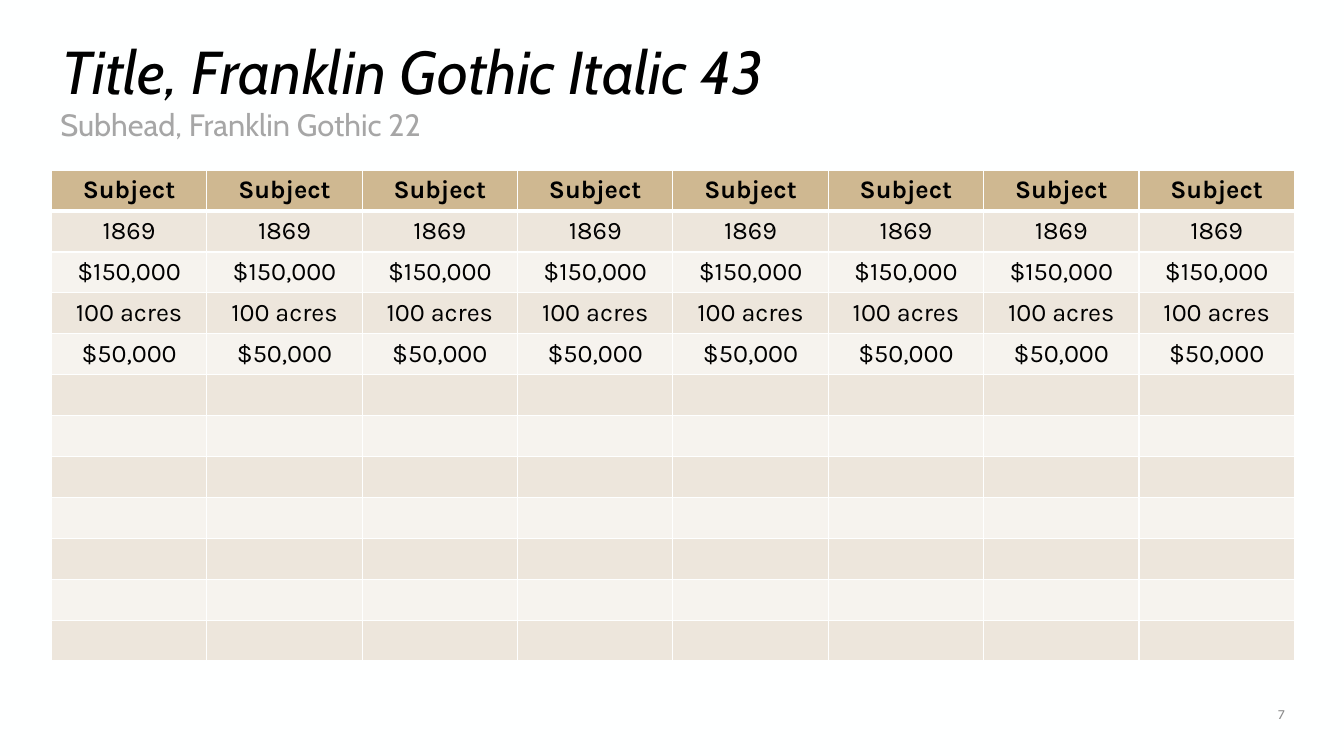
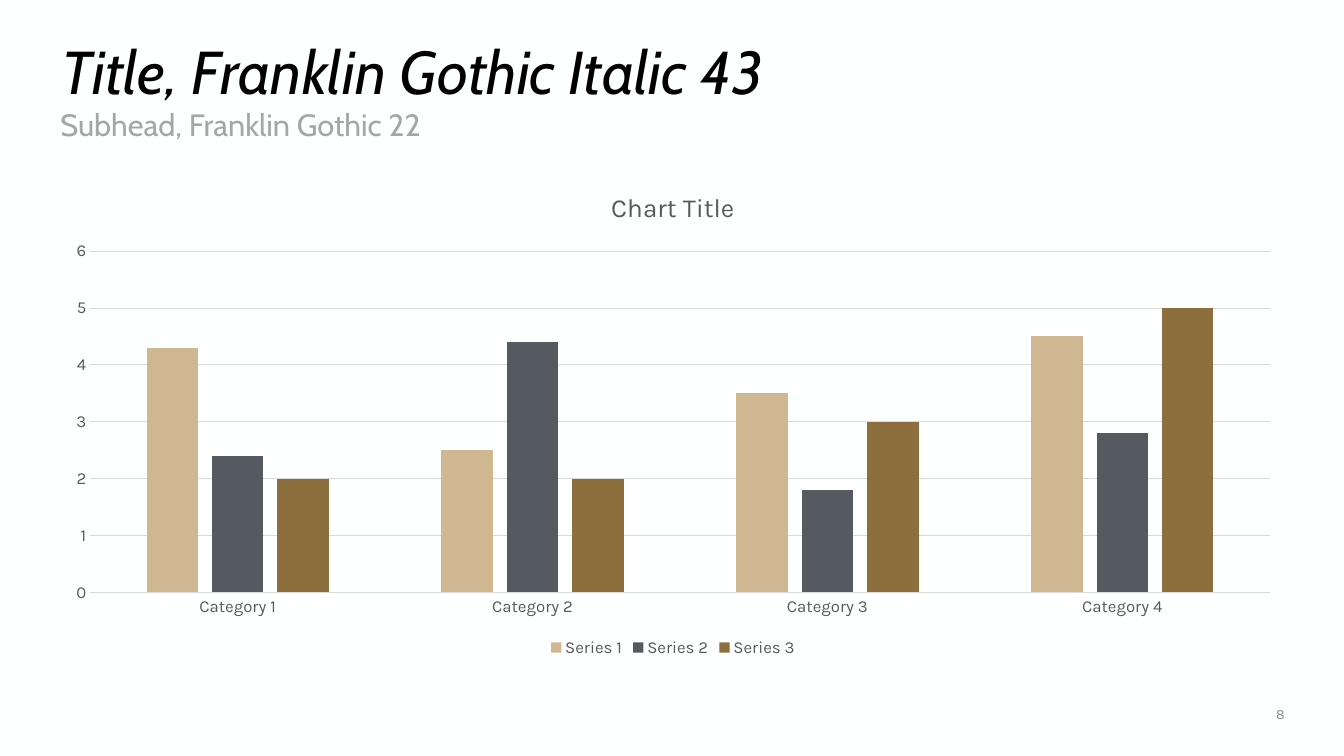
from lxml.etree import SubElement
from pptx import Presentation
from pptx.chart.data import CategoryChartData
from pptx.dml.color import RGBColor
from pptx.enum.chart import XL_CHART_TYPE as ChartType
from pptx.enum.chart import XL_LEGEND_POSITION as LegendPosition
from pptx.enum.chart import XL_TICK_MARK as TickMark
from pptx.enum.text import MSO_ANCHOR as Anchor
from pptx.enum.text import PP_ALIGN as Align
from pptx.oxml.ns import qn
from pptx.util import Pt

# Shared measures, fonts and colours
PX = 9525
PAGE_WIDTH, PAGE_HEIGHT = 1280, 720
CONTENT = (49, 162, 1184, 468)
HEAD_FONT, BODY_FONT = "Cabin", "Karla"
PAPER, INK, SUBHEAD_GRAY, NUMBER_GRAY = "FEFFFF", "000000", "A6A6A6", "8C8C8C"
GOLD, SLATE, BRONZE = "CFB891", "555960", "8D6F3D"
BANDS = ("EDE6DC", "F6F3EE")
CHART_GRAY, GRID_GRAY = "595959", "D9D9D9"

# Table content: one label per filled row
ROW_LABELS = ["Subject", "1869", "$150,000", "100 acres", "$50,000"]
ROWS, COLUMNS = 12, 8

# Chart content
CATEGORIES = [f"Category {number}" for number in range(1, 5)]
SERIES = [
    ("Series 1", (4.3, 2.5, 3.5, 4.5), GOLD),
    ("Series 2", (2.4, 4.4, 1.8, 2.8), SLATE),
    ("Series 3", (2, 2, 3, 5), BRONZE),
]


def color(value):
    return RGBColor.from_string(value)


def place(*lengths):
    return [length * PX for length in lengths]


def paint(fill, value):
    fill.solid()
    fill.fore_color.rgb = color(value)


def set_font(font, name, size, value, bold=False, italic=False):
    font.name, font.size = name, Pt(size)
    font.bold, font.italic = bold, italic
    font.color.rgb = color(value)


def add_text(page, area, text, name, size, value, italic=False,
             anchor=Anchor.MIDDLE, align=Align.LEFT, spacing=1.0):
    frame = page.shapes.add_textbox(*place(*area)).text_frame
    frame.word_wrap = True
    frame.vertical_anchor = anchor
    para = frame.paragraphs[0]
    para.alignment, para.line_spacing = align, spacing
    span = para.add_run()
    span.text = text
    set_font(span.font, name, size, value, italic=italic)


def add_page(deck, number):
    """Add a page with its background, title, subhead and page number."""
    page = deck.slides.add_slide(deck.slide_layouts[6])
    paint(page.background.fill, PAPER)
    add_text(page, (49, 40, 1183, 62), "Title, Franklin Gothic Italic 43",
             HEAD_FONT, 43.2, INK, italic=True, spacing=0.9)
    add_text(page, (48, 100, 1184, 38), "Subhead, Franklin Gothic 22",
             HEAD_FONT, 22, SUBHEAD_GRAY, anchor=Anchor.TOP, spacing=0.9)
    add_text(page, (1137, 663, 96, 34), str(number),
             BODY_FONT, 10, NUMBER_GRAY, align=Align.RIGHT)
    return page


def set_borders(cell, top, bottom):
    """Draw the cell's four borders; top and bottom are widths in points."""
    properties = cell._tc.get_or_add_tcPr()
    for side, width in (("L", 1), ("R", 1), ("T", top), ("B", bottom)):
        line = SubElement(properties, qn(f"a:ln{side}"), w=str(Pt(width)))
        fill = SubElement(line, qn("a:solidFill"))
        SubElement(fill, qn("a:srgbClr"), val=PAPER)


def fill_cell(cell, row):
    is_header = row == 0
    set_borders(cell, 3 if row == 1 else 1, 3 if is_header else 1)
    paint(cell.fill, GOLD if is_header else BANDS[(row - 1) % 2])
    cell.vertical_anchor = Anchor.MIDDLE
    cell.margin_top = cell.margin_bottom = 0
    if row < len(ROW_LABELS):
        para = cell.text_frame.paragraphs[0]
        para.alignment = Align.CENTER
        span = para.add_run()
        span.text = ROW_LABELS[row]
        set_font(span.font, BODY_FONT, 18, INK, bold=is_header)


def add_subject_table(page):
    table = page.shapes.add_table(ROWS, COLUMNS, *place(*CONTENT)).table
    table.horz_banding = False
    for column in table.columns:
        column.width = CONTENT[2] * PX // COLUMNS
    for row_number, row in enumerate(table.rows):
        row.height = CONTENT[3] * PX // ROWS
        for cell in row.cells:
            fill_cell(cell, row_number)


def style_line(line):
    line.color.rgb = color(GRID_GRAY)
    line.width = Pt(0.75)


def style_axes(chart):
    for axis in (chart.category_axis, chart.value_axis):
        axis.major_tick_mark = axis.minor_tick_mark = TickMark.NONE
        set_font(axis.tick_labels.font, BODY_FONT, 12, CHART_GRAY)
    style_line(chart.category_axis.format.line)
    values = chart.value_axis
    values.minimum_scale, values.maximum_scale, values.major_unit = 0, 6, 1
    values.format.line.fill.background()
    style_line(values.major_gridlines.format.line)


def add_column_chart(page):
    data = CategoryChartData()
    data.categories = CATEGORIES
    for name, values, _ in SERIES:
        data.add_series(name, values)
    chart = page.shapes.add_chart(
        ChartType.COLUMN_CLUSTERED, *place(*CONTENT), data).chart
    set_font(chart.font, BODY_FONT, 10, INK)

    # Title and legend
    chart.has_title = True
    span = chart.chart_title.text_frame.paragraphs[0].add_run()
    span.text = "Chart Title"
    set_font(span.font, BODY_FONT, 18.6, CHART_GRAY)
    chart.chart_title.include_in_layout = False
    chart.has_legend = True
    chart.legend.position = LegendPosition.BOTTOM
    chart.legend.include_in_layout = False
    set_font(chart.legend.font, BODY_FONT, 12, CHART_GRAY)

    # Axes and columns
    style_axes(chart)
    plot = chart.plots[0]
    plot.vary_by_categories = False
    plot.gap_width, plot.overlap = 219, -27
    for series, (_, _, value) in zip(plot.series, SERIES):
        paint(series.format.fill, value)


def main():
    deck = Presentation()
    deck.slide_width, deck.slide_height = place(PAGE_WIDTH, PAGE_HEIGHT)
    add_subject_table(add_page(deck, 7))
    add_column_chart(add_page(deck, 8))
    deck.save("out.pptx")


if __name__ == "__main__":
    main()
